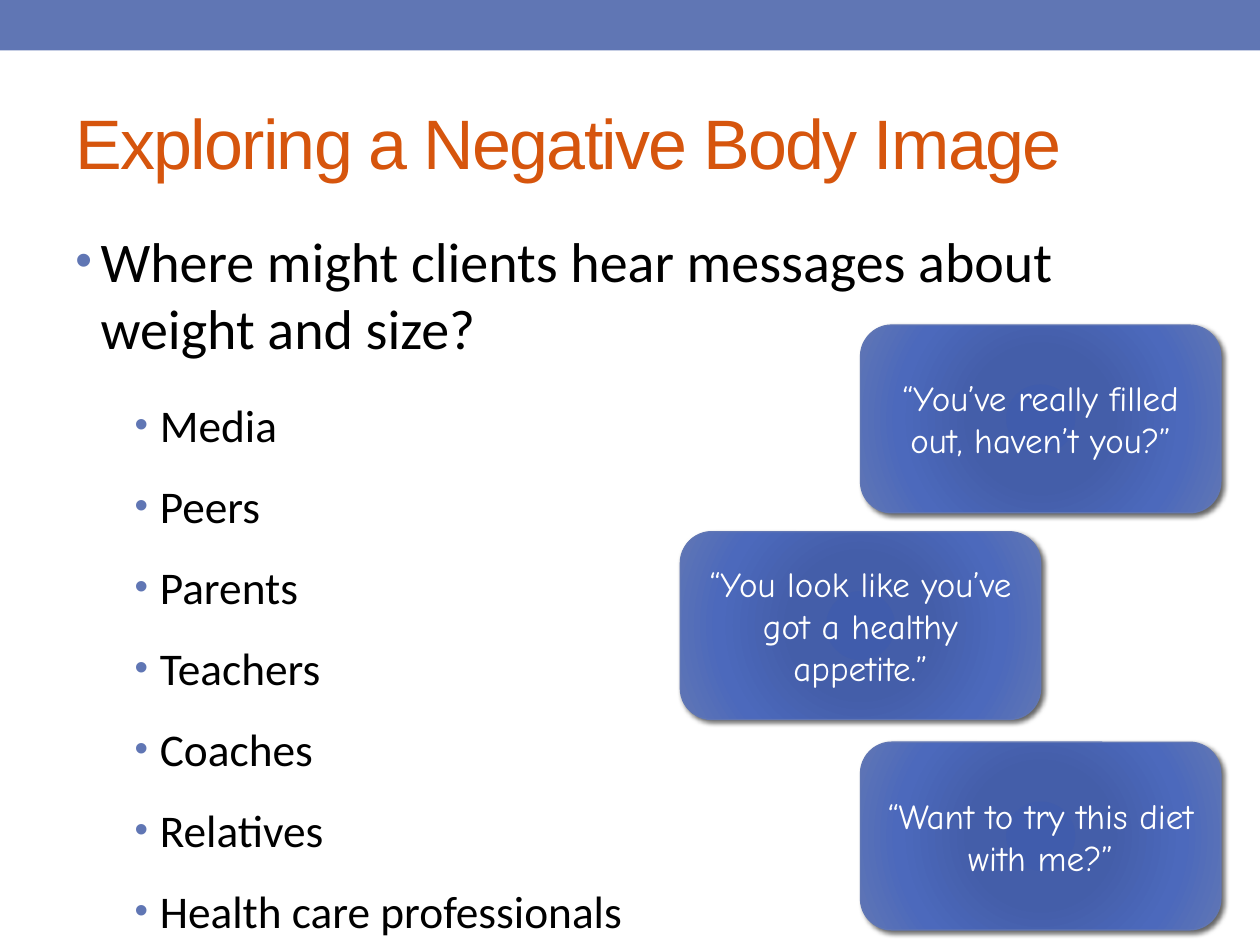
from pptx import Presentation
from pptx.dml.color import RGBColor
from pptx.enum.shapes import MSO_SHAPE as Shape
from pptx.enum.text import MSO_ANCHOR as Anchor, PP_ALIGN as Align
from pptx.oxml import parse_xml
from pptx.util import Inches, Pt

COLORS = {
    "accent": "6076B4",
    "title": "D6550D",
    "text": "000000",
    "light": "FFFFFF",
    "shadow": "000000",
}
GRADIENT = [(0, "405CAC"), (34, "445EA9"), (70, "4C69BC"), (100, "6076B4")]
NS = 'xmlns:a="http://schemas.openxmlformats.org/drawingml/2006/main"'


def style_text(para, font, size, color):
    for span in para.runs:
        span.font.name = font
        span.font.size = Pt(size)
        span.font.color.rgb = RGBColor.from_string(COLORS[color])


def add_bullets(left, top, width, height, lines, size, level, indent):
    box = page.shapes.add_textbox(Inches(left), Inches(top), Inches(width), Inches(height))
    box.text_frame.word_wrap = True
    box.text_frame.text = "\n".join(lines)
    for para in box.text_frame.paragraphs:
        para.level = level
        para.space_after = Pt(10)
        style_text(para, "Calibri", size, "text")
        props = para._p.get_or_add_pPr()
        props.set("marL", str(Inches(indent)))
        props.set("indent", str(Inches(-0.2)))
        props.insert(0, parse_xml(f'<a:spcBef {NS}><a:spcPct val="20000"/></a:spcBef>'))
        for bullet in (
            f'<a:buClr {NS}><a:srgbClr val="{COLORS["accent"]}"/></a:buClr>',
            f'<a:buSzPct {NS} val="85000"/>',
            f'<a:buFont {NS} typeface="Arial"/>',
            f'<a:buChar {NS} char="•"/>',
        ):
            props.append(parse_xml(bullet))


deck = Presentation()
deck.slide_width = Inches(10)
deck.slide_height = Inches(7.5)
page = deck.slides.add_slide(deck.slide_layouts[6])

band = page.shapes.add_shape(Shape.RECTANGLE, 0, 0, deck.slide_width, Inches(0.4))
band.shadow.inherit = False
band.fill.solid()
band.fill.fore_color.rgb = RGBColor.from_string(COLORS["accent"])
band.line.fill.background()

title = page.shapes.add_textbox(Inches(0.5), Inches(0.58), Inches(9), Inches(1.08))
title.text_frame.word_wrap = True
title.text_frame.vertical_anchor = Anchor.MIDDLE
title.text_frame.text = "Exploring a Negative Body Image"
heading = title.text_frame.paragraphs[0]
style_text(heading, "Arial", 40, "title")
heading.runs[0].font._element.set("spc", "-100")

question = ["Where might clients hear messages about weight and size?"]
sources = ["Media", "Peers", "Parents", "Teachers", "Coaches", "Relatives",
           "Health care professionals"]
add_bullets(0.5, 1.75, 9, 1.57, question, 32, 0, 0.2)
add_bullets(0.67, 3.1, 5.18, 4.1, sources, 25.9, 1, 0.5)

stops = "".join(
    f'<a:gs pos="{position * 1000}"><a:srgbClr val="{color}"/></a:gs>'
    for position, color in GRADIENT
)
quotes = [
    (6.83, 2.58, "“You’ve really filled out, haven’t you?”"),
    (5.4, 4.22, "“You look like you’ve got a healthy appetite.”"),
    (6.83, 5.89, "“Want to try this diet with me?”"),
]
for left, top, quote in quotes:
    card = page.shapes.add_shape(
        Shape.ROUNDED_RECTANGLE, Inches(left), Inches(top), Inches(2.86), Inches(1.49))
    card.line.color.rgb = RGBColor.from_string(COLORS["accent"])
    card.line.width = Pt(0.75)
    card.shadow.inherit = False
    props = card._element.spPr
    props.prstGeom.addnext(parse_xml(
        f'<a:gradFill {NS} rotWithShape="1"><a:gsLst>{stops}</a:gsLst><a:path path="circle">'
        '<a:fillToRect l="100000" t="100000" r="100000" b="100000"/></a:path></a:gradFill>'))
    props.effectLst.append(parse_xml(
        f'<a:outerShdw {NS} blurRad="{Pt(3)}" dist="{Pt(2)}" dir="2700000" rotWithShape="0">'
        f'<a:srgbClr val="{COLORS["shadow"]}"><a:alpha val="60000"/></a:srgbClr></a:outerShdw>'))
    card.text_frame.word_wrap = True
    card.text_frame.vertical_anchor = Anchor.MIDDLE
    card.text_frame.text = quote
    para = card.text_frame.paragraphs[0]
    para.alignment = Align.CENTER
    style_text(para, "Comic Neue", 20, "light")

deck.save("out.pptx")
